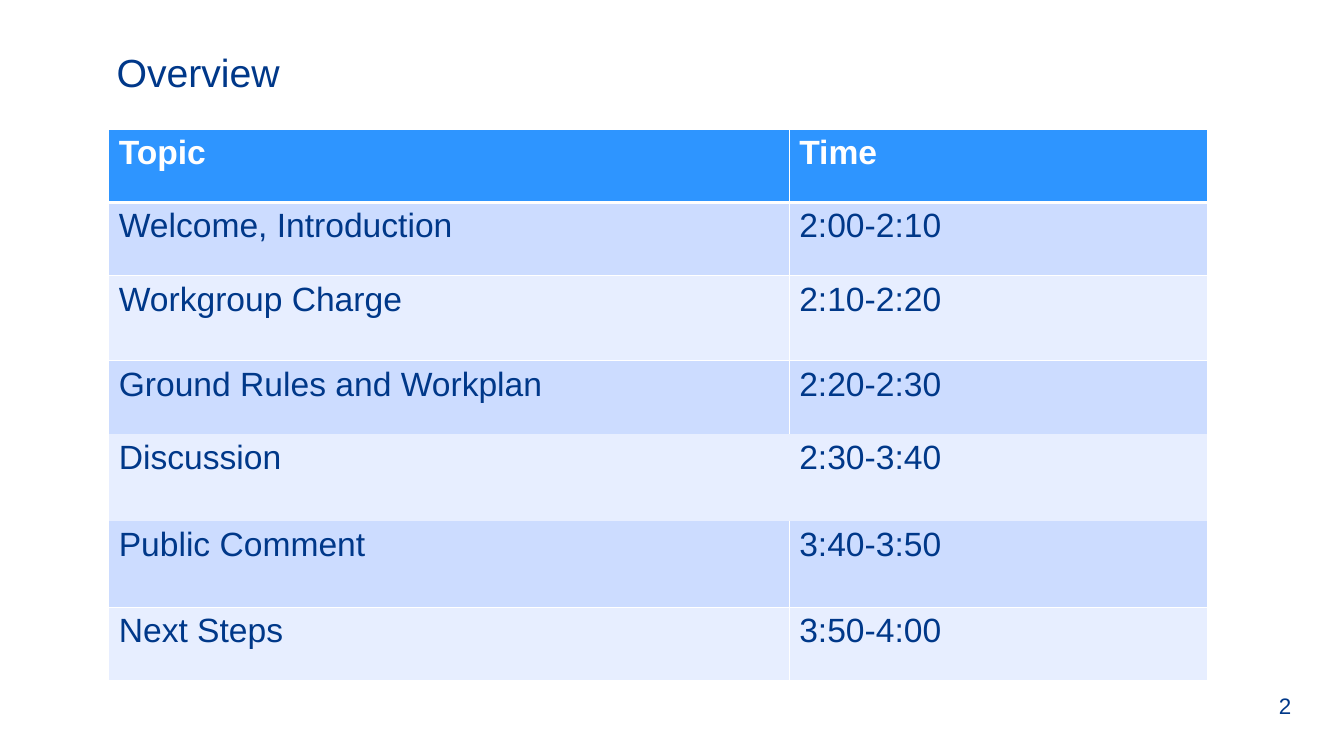
"""Build the meeting overview slide with its agenda table."""
from lxml import etree
from pptx import Presentation
from pptx.dml.color import RGBColor
from pptx.enum.text import MSO_ANCHOR
from pptx.oxml.ns import qn
from pptx.util import Cm, Pt

MIDDLE = MSO_ANCHOR.MIDDLE
FONT = "Arial"
COLORS = {
    "navy": "003889",
    "white": "FFFFFF",
    "header": "2E95FF",
    "dark_band": "CCDCFF",
    "light_band": "E7EEFF",
}
AGENDA = [
    ("Topic", "Time", 1.85),
    ("Welcome, Introduction", "2:00-2:10", 1.85),
    ("Workgroup Charge", "2:10-2:20", 2.14),
    ("Ground Rules and Workplan", "2:20-2:30", 1.85),
    ("Discussion", "2:30-3:40", 2.18),
    ("Public Comment", "3:40-3:50", 2.18),
    ("Next Steps", "3:50-4:00", 1.85),
]
COLUMN_WIDTHS = [17.15, 10.54]
HEADER_ROW = 0
DISCUSSION_ROW = 4


def add_run(paragraph, text, size, color, bold=False):
    run = paragraph.add_run()
    run.text = text
    run.font.name = FONT
    run.font.size = Pt(size)
    run.font.bold = bold
    run.font.color.rgb = RGBColor.from_string(COLORS[color])


def add_border(cell, side, points):
    line = etree.SubElement(cell._tc.get_or_add_tcPr(), qn(f"a:ln{side}"), w=str(Pt(points)))
    if points:
        fill = etree.SubElement(line, qn("a:solidFill"))
        etree.SubElement(fill, qn("a:srgbClr"), val=COLORS["white"])
    else:
        etree.SubElement(line, qn("a:noFill"))


presentation = Presentation()
presentation.slide_width = Cm(33.87)
presentation.slide_height = Cm(19.05)
slide = presentation.slides.add_slide(presentation.slide_layouts[6])

for text, size, left, top, width, height in [
    ("Overview", 28, 2.69, 0.97, 29.21, 1.68),
    ("2", 16, 31.98, 17.27, 1.6, 1.02),
]:
    box = slide.shapes.add_textbox(Cm(left), Cm(top), Cm(width), Cm(height))
    box.text_frame.word_wrap = True
    box.text_frame.vertical_anchor = MIDDLE
    add_run(box.text_frame.paragraphs[0], text, size, "navy")

table_height = sum(height for _, _, height in AGENDA)
table = slide.shapes.add_table(
    len(AGENDA), len(COLUMN_WIDTHS), Cm(2.74), Cm(3.25), Cm(sum(COLUMN_WIDTHS)), Cm(table_height)
).table
for column, width in zip(table.columns, COLUMN_WIDTHS):
    column.width = Cm(width)

for row_index, (topic, time, height) in enumerate(AGENDA):
    table.rows[row_index].height = Cm(height)
    is_header = row_index == HEADER_ROW
    band = "header" if is_header else "dark_band" if row_index % 2 else "light_band"
    side_width = 0 if row_index == DISCUSSION_ROW else 1
    top_width = 0 if row_index in (DISCUSSION_ROW, DISCUSSION_ROW + 1) else 3 if row_index == 1 else 1
    bottom_width = 0 if row_index in (DISCUSSION_ROW - 1, DISCUSSION_ROW) else 3 if is_header else 1
    for column_index, text in enumerate((topic, time)):
        cell = table.cell(row_index, column_index)
        for side, points in zip("LRTB", (side_width, side_width, top_width, bottom_width)):
            add_border(cell, side, points)
        cell.fill.solid()
        cell.fill.fore_color.rgb = RGBColor.from_string(COLORS[band])
        add_run(cell.text_frame.paragraphs[0], text, 24, "white" if is_header else "navy", is_header)

presentation.save("out.pptx")
